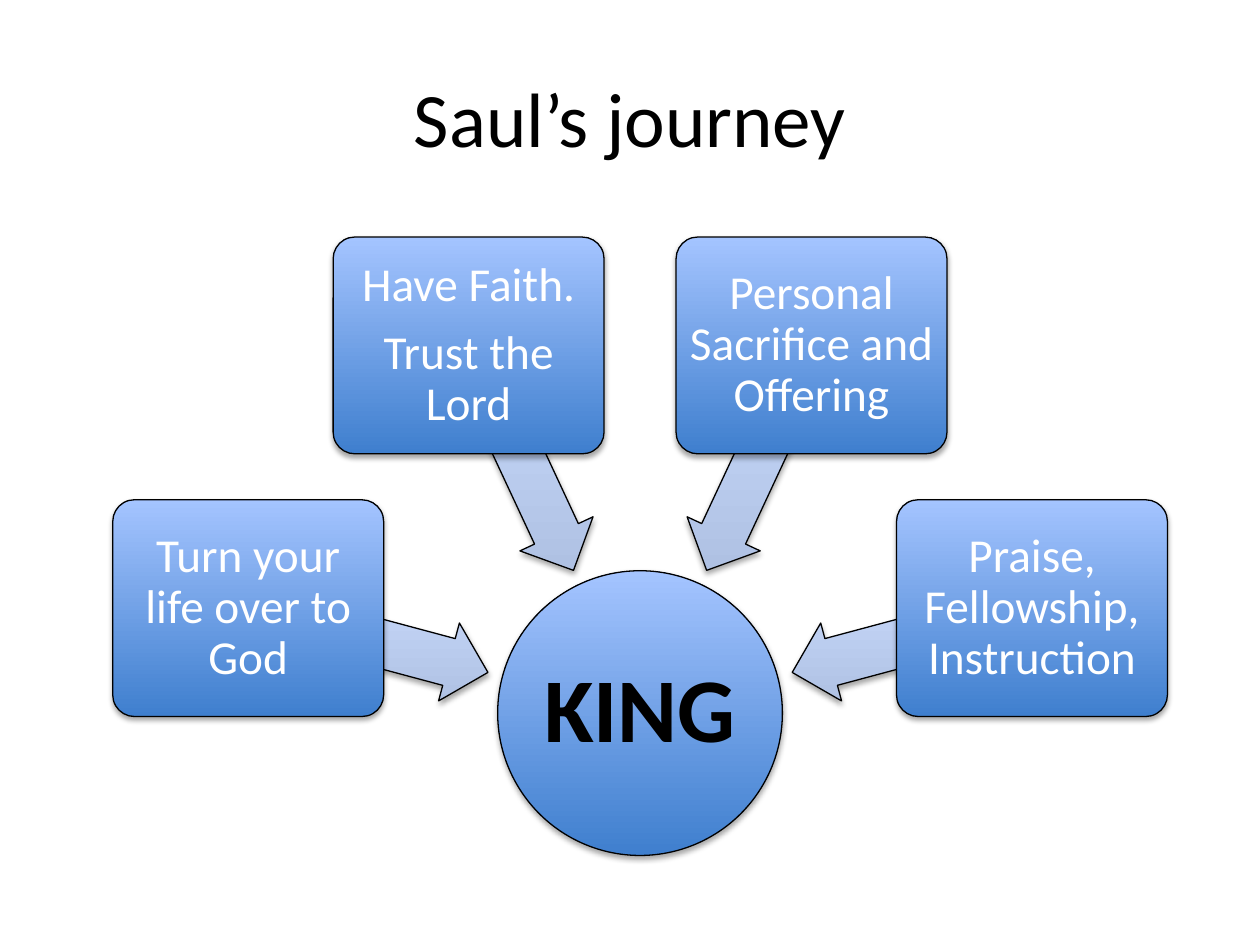
"""Build the slide of four steps that lead to the king circle."""
import math

import pptx
import pptx.dml.color
import pptx.enum.shapes
import pptx.enum.text
import pptx.oxml
import pptx.oxml.ns
import pptx.util

Inches = pptx.util.Inches
Pt = pptx.util.Pt
RGBColor = pptx.dml.color.RGBColor
ShapeType = pptx.enum.shapes.MSO_SHAPE

BLACK = RGBColor(0x00, 0x00, 0x00)
WHITE = RGBColor(0xFF, 0xFF, 0xFF)
BLUE_GRADIENT = (RGBColor(0x3F, 0x7F, 0xCE), RGBColor(0xA4, 0xC4, 0xFF))
PALE_GRADIENT = (RGBColor(0xAD, 0xBF, 0xE1), RGBColor(0xCC, 0xDD, 0xFF))

TITLE = "Saul’s journey"
GOAL = "KING"
STEPS = [
    (195, ["Turn your life over to God"]),
    (245, ["Have Faith.", "Trust the Lord"]),
    (295, ["Personal Sacrifice and Offering"]),
    (345, ["Praise, Fellowship, Instruction"]),
]

HUB = (5.08, 5.66)
HUB_SIZE = (2.26, 2.26)
ARROW_SIZE = (1.98, 0.64)
ARROW_RADIUS = 2.24
BOX_SIZE = (2.15, 1.72)
BOX_RADIUS = 3.22

TITLE_FONT = {"name": "Calibri", "size": Pt(44), "bold": False}
GOAL_FONT = {"name": "Calibri", "size": Pt(52), "bold": True}
STEP_FONT = {"name": "Calibri", "size": Pt(27), "bold": False}

SHADOW = (
    f'<a:effectLst {pptx.oxml.ns.nsdecls("a")}>'
    '<a:outerShdw blurRad="40000" dist="23000" dir="5400000" rotWithShape="0">'
    '<a:srgbClr val="000000"><a:alpha val="35000"/></a:srgbClr>'
    "</a:outerShdw></a:effectLst>"
)


def point_around_hub(angle, radius):
    radians = math.radians(angle)
    return HUB[0] + radius * math.cos(radians), HUB[1] + radius * math.sin(radians)


def write_text(shape, lines, font, color, inset, paragraph_format):
    frame = shape.text_frame
    frame.word_wrap = True
    frame.vertical_anchor = pptx.enum.text.MSO_ANCHOR.MIDDLE
    for side in ("left", "right", "top", "bottom"):
        setattr(frame, f"margin_{side}", Inches(inset))
    frame.text = "\n".join(lines)
    for paragraph in frame.paragraphs:
        paragraph.alignment = pptx.enum.text.PP_ALIGN.CENTER
        for name, value in paragraph_format.items():
            setattr(paragraph, name, value)
        for name, value in font.items():
            setattr(paragraph.runs[0].font, name, value)
        paragraph.runs[0].font.color.rgb = color


def add_shape(slide, kind, center, size, gradient, adjustments=()):
    corner = [middle - length / 2 for middle, length in zip(center, size)]
    shape = slide.shapes.add_shape(kind, *map(Inches, (*corner, *size)))
    for index, value in enumerate(adjustments):
        shape.adjustments[index] = value
    shape.fill.gradient()
    shape.fill.gradient_angle = 90
    for stop, color in zip(shape.fill.gradient_stops, gradient):
        stop.color.rgb = color
    properties = shape._element.spPr
    properties.find(pptx.oxml.ns.qn("a:gradFill")).set("rotWithShape", "0")
    shape.line.color.rgb = BLACK
    shape.line.width = Pt(0.75)
    properties.append(pptx.oxml.parse_xml(SHADOW))
    return shape


def main():
    presentation = pptx.Presentation()
    presentation.slide_width, presentation.slide_height = Inches(10), Inches(7.5)
    slide = presentation.slides.add_slide(presentation.slide_layouts[6])

    title = slide.shapes.add_textbox(*map(Inches, (0.5, 0.3, 9, 1.25)))
    write_text(title, [TITLE], TITLE_FONT, BLACK, 0.1, {})

    hub = add_shape(slide, ShapeType.OVAL, HUB, HUB_SIZE, BLUE_GRADIENT)
    write_text(hub, [GOAL], GOAL_FONT, BLACK, 0, {"line_spacing": 0.9})

    step_format = {"line_spacing": 0.9, "space_after": Pt(9.45)}
    for angle, lines in STEPS:
        arrow = add_shape(slide, ShapeType.LEFT_ARROW, point_around_hub(angle, ARROW_RADIUS),
                          ARROW_SIZE, PALE_GRADIENT, (0.6, 0.5))
        arrow.rotation = angle
        box = add_shape(slide, ShapeType.ROUNDED_RECTANGLE, point_around_hub(angle, BOX_RADIUS),
                        BOX_SIZE, BLUE_GRADIENT, (0.1,))
        write_text(box, lines, STEP_FONT, WHITE, 0.06, step_format)

    presentation.save("out.pptx")


if __name__ == "__main__":
    main()
